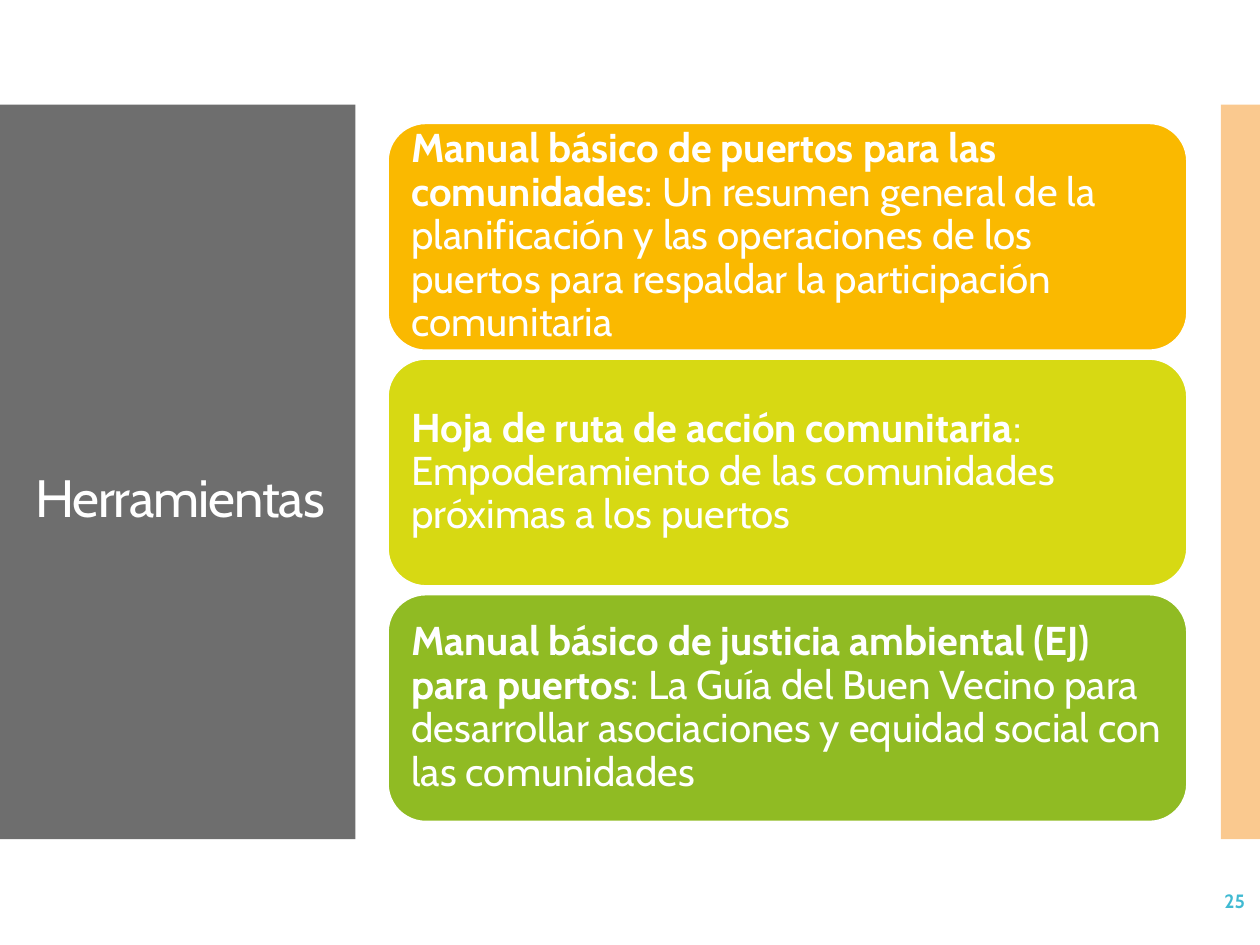
from lxml.etree import SubElement
from pptx import Presentation
from pptx.dml.color import RGBColor
from pptx.enum.shapes import MSO_SHAPE
from pptx.enum.text import MSO_ANCHOR, PP_ALIGN
from pptx.oxml.ns import qn
from pptx.util import Inches, Pt

FONT = "Cabin"
WHITE = RGBColor(0xFF, 0xFF, 0xFF)
GRAY = RGBColor(0x6E, 0x6E, 0x6E)
ORANGE = RGBColor(0xF7, 0x94, 0x21)
AMBER = RGBColor(0xFA, 0xB9, 0x00)
LIME = RGBColor(0xD7, 0xD9, 0x13)
GREEN = RGBColor(0x90, 0xBB, 0x23)
BLUE = RGBColor(0x40, 0xBA, 0xD2)

TOOLS = [
    (AMBER, "Manual básico de puertos para las comunidades",
     ": Un resumen general de la planificación y las operaciones de los "
     "puertos para respaldar la participación comunitaria"),
    (LIME, "Hoja de ruta de acción comunitaria",
     ": Empoderamiento de las comunidades próximas a los puertos"),
    (GREEN, "Manual básico de justicia ambiental (EJ) para puertos",
     ": La Guía del Buen Vecino para desarrollar asociaciones y equidad "
     "social con las comunidades"),
]


def add_block(slide, kind, box, color):
    block = slide.shapes.add_shape(kind, *map(Inches, box))
    block.shadow.inherit = False
    block.fill.solid()
    block.fill.fore_color.rgb = color
    block.line.fill.background()
    return block


def add_run(para, text, size, color=WHITE, bold=False):
    run = para.add_run()
    run.text = text
    run.font.name = FONT
    run.font.size = Pt(size)
    run.font.bold = bold
    run.font.color.rgb = color
    return run


def add_label(slide, box, text, size, color, bold=False):
    label = slide.shapes.add_textbox(*map(Inches, box))
    frame = label.text_frame
    frame.word_wrap = True
    frame.vertical_anchor = MSO_ANCHOR.MIDDLE
    run = add_run(frame.paragraphs[0], text, size, color, bold)
    return frame, run


def add_bars(slide, top, height):
    """Draw the gray title panel and the half-clear strip at the right edge."""
    add_block(slide, MSO_SHAPE.RECTANGLE, (0, top, 2.82, height), GRAY)
    strip = add_block(slide, MSO_SHAPE.RECTANGLE, (9.69, top, 0.31, height), ORANGE)
    tint = strip.fill._xPr.find(".//" + qn("a:srgbClr"))
    SubElement(tint, qn("a:alpha")).set("val", "50000")


def add_title(slide, box):
    frame, run = add_label(slide, box, "Herramientas", 30, WHITE)
    frame.margin_top = Inches(0.5)  # sets the title below the middle
    frame.paragraphs[0].line_spacing = 0.9
    run.font._element.set("spc", "-60")


def add_tools(slide, box, gap):
    """Stack one rounded card per tool, with equal gaps, inside the box."""
    left, top, width, height = box
    tall = (height - gap * (len(TOOLS) - 1)) / len(TOOLS)
    for i, (color, name, note) in enumerate(TOOLS):
        spot = (left, top + i * (tall + gap), width, tall)
        card = add_block(slide, MSO_SHAPE.ROUNDED_RECTANGLE, spot, color)
        card.line.color.rgb = WHITE
        card.line.width = Pt(0.85)
        frame = card.text_frame
        frame.word_wrap = True
        frame.vertical_anchor = MSO_ANCHOR.MIDDLE
        frame.margin_left = frame.margin_right = Inches(0.1)
        frame.margin_top = frame.margin_bottom = Inches(0.1)
        para = frame.paragraphs[0]
        para.alignment = PP_ALIGN.LEFT
        para.line_spacing = 0.9
        add_run(para, name, 23, bold=True)
        add_run(para, note, 23)


def add_number(slide, box):
    frame, _ = add_label(slide, box, "25", 11, BLUE, bold=True)
    frame.paragraphs[0].alignment = PP_ALIGN.RIGHT


def main():
    deck = Presentation()
    deck.slide_width, deck.slide_height = Inches(10), Inches(7.5)
    slide = deck.slides.add_slide(deck.slide_layouts[6])
    add_bars(slide, 0.83, 5.83)
    add_title(slide, (0.18, 1.23, 2.53, 5.03))
    add_number(slide, (8.72, 6.95, 1.26, 0.4))
    add_tools(slide, (3.08, 0.98, 6.34, 5.54), 0.07)
    deck.save("out.pptx")


if __name__ == "__main__":
    main()
